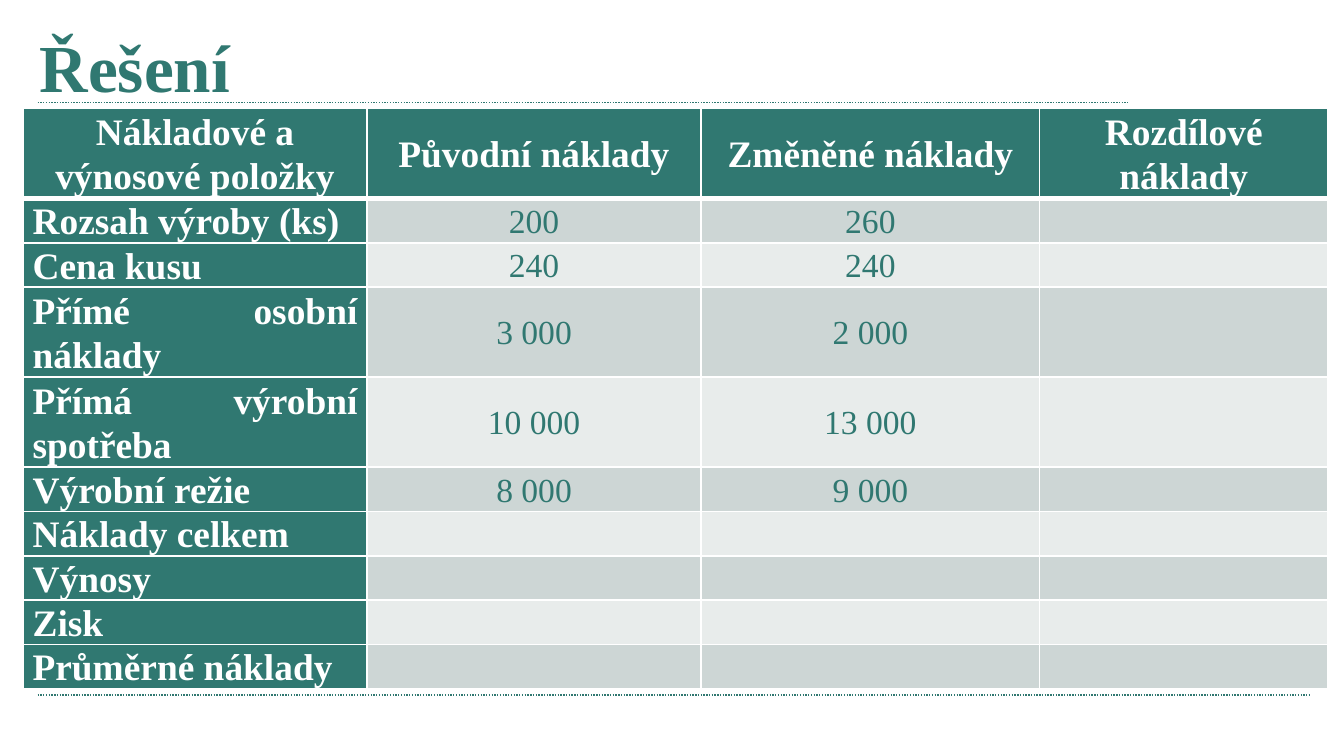
import pptx
import pptx.util
import pptx.dml.color
import pptx.enum.dml
import pptx.enum.shapes
import pptx.enum.text
import pptx.oxml

WIDE = pptx.util.Inches(10)
HIGH = WIDE * 9 // 16
FONT = "Times New Roman"
TEAL = pptx.dml.color.RGBColor(0x30, 0x78, 0x71)
WHITE = pptx.dml.color.RGBColor(0xFF, 0xFF, 0xFF)
BANDS = (pptx.dml.color.RGBColor(0xCD, 0xD6, 0xD5),
         pptx.dml.color.RGBColor(0xE8, 0xEC, 0xEB))
NS = 'xmlns:a="http://schemas.openxmlformats.org/drawingml/2006/main"'
ALIGN = pptx.enum.text.PP_ALIGN
ANCHOR = pptx.enum.text.MSO_ANCHOR

HEAD = {"name": FONT, "size": pptx.util.Pt(20), "bold": True}
BODY = {"name": FONT, "size": pptx.util.Pt(18), "bold": False}
TITLE = {"name": FONT, "size": pptx.util.Pt(36), "bold": True}
CELL = {"margin_left": pptx.util.Inches(0.07),
        "margin_right": pptx.util.Inches(0.07),
        "margin_top": 0, "margin_bottom": 0,
        "vertical_anchor": ANCHOR.MIDDLE}

COLS = (2.56, 2.49, 2.52, 2.15)
LINE = pptx.util.Inches(0.33)
TALL = pptx.util.Inches(0.67)
TWO_LINE = (0, 3, 4)
ROWS = (
    ("Nákladové a výnosové položky", "Původní náklady",
     "Změněné náklady", "Rozdílové náklady"),
    ("Rozsah výroby (ks)", "200", "260", ""),
    ("Cena kusu", "240", "240", ""),
    ("Přímé osobní náklady", "3 000", "2 000", ""),
    ("Přímá výrobní spotřeba", "10 000", "13 000", ""),
    ("Výrobní režie", "8 000", "9 000", ""),
    ("Náklady celkem", "", "", ""),
    ("Výnosy", "", "", ""),
    ("Zisk", "", "", ""),
    ("Průměrné náklady", "", "", ""),
)


def place(left, top, width, height):
    """Turn percentages of the slide into lengths."""
    return (int(left * WIDE / 100), int(top * HIGH / 100),
            int(width * WIDE / 100), int(height * HIGH / 100))


def apply(thing, form):
    for key, value in form.items():
        setattr(thing, key, value)


def write(par, text, form, color):
    run = par.add_run()
    run.text = text
    apply(run.font, form)
    run.font.color.rgb = color


def add_title(slide, box, text):
    title = slide.shapes.title
    apply(title, dict(zip(("left", "top", "width", "height"), box)))
    frame = title.text_frame
    frame.vertical_anchor = ANCHOR.TOP
    par = frame.paragraphs[0]
    par.alignment = ALIGN.LEFT
    write(par, text, TITLE, TEAL)


def add_rule(slide, box):
    left, top, width, _ = box
    rule = slide.shapes.add_connector(
        pptx.enum.shapes.MSO_CONNECTOR.STRAIGHT, left, top, left + width, top)
    rule.line.color.rgb = TEAL
    rule.line.width = pptx.util.Pt(0.75)
    rule.line.dash_style = pptx.enum.dml.MSO_LINE.ROUND_DOT
    rule._element.spPr.append(pptx.oxml.parse_xml(f"<a:effectLst {NS}/>"))


def add_edges(cell, row):
    thick = {0: "B", 1: "T"}.get(row)
    for side in "LRTB":
        width = pptx.util.Pt(3 if side == thick else 1)
        cell._tc.get_or_add_tcPr().append(pptx.oxml.parse_xml(
            f'<a:ln{side} {NS} w="{width}"><a:solidFill>'
            f'<a:srgbClr val="{WHITE}"/></a:solidFill></a:ln{side}>'))


def fill_cell(cell, row, col, text):
    label = row == 0 or col == 0
    apply(cell, CELL)
    add_edges(cell, row)
    cell.fill.solid()
    cell.fill.fore_color.rgb = TEAL if label else BANDS[(row - 1) % 2]
    if text:
        par = cell.text_frame.paragraphs[0]
        par.alignment = ALIGN.JUSTIFY if row and not col else ALIGN.CENTER
        par.line_spacing = 1.07
        write(par, text, HEAD if label else BODY, WHITE if label else TEAL)


def add_costs(slide, box):
    table = slide.shapes.add_table(len(ROWS), len(COLS), *box).table
    table.first_col = True
    for col, share in zip(table.columns, COLS):
        col.width = int(box[2] * share / sum(COLS))
    for num, texts in enumerate(ROWS):
        table.rows[num].height = TALL if num in TWO_LINE else LINE
        for col, text in enumerate(texts):
            fill_cell(table.cell(num, col), num, col, text)


def main():
    deck = pptx.Presentation()
    deck.slide_width, deck.slide_height = WIDE, HIGH
    slide = deck.slides.add_slide(deck.slide_layouts[5])
    # Rules under the title and at the foot
    add_rule(slide, place(2.8, 13.6, 81.1, 0))
    add_rule(slide, place(2.8, 91.95, 94.7, 0))
    # Heading and cost table
    add_title(slide, place(1.95, 2.5, 88.2, 14), "Řešení")
    add_costs(slide, place(1.73, 14.36, 97.1, 76.8))
    deck.save("out.pptx")


if __name__ == "__main__":
    main()
